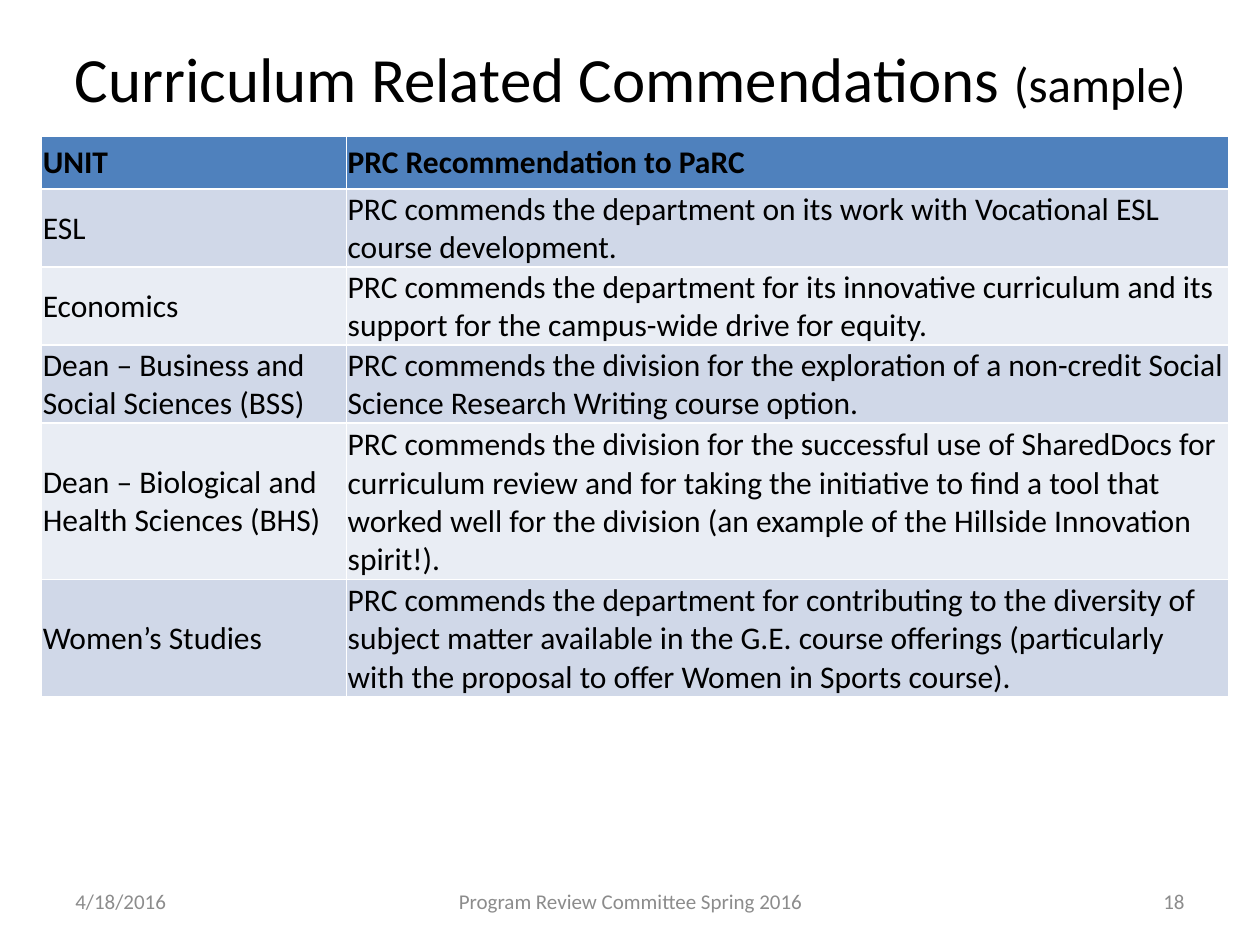
from pptx import Presentation
from pptx.dml.color import RGBColor
from pptx.enum.text import MSO_ANCHOR as ANCHOR, PP_ALIGN as ALIGN
from pptx.util import Inches, Pt

COLORS = {"text": "000000", "footer": "8C8C8C", "header": "4F81BD",
          "odd": "D0D8E8", "even": "E9EDF4"}
LINE_HEIGHT = 0.31

# Unit, recommendation, lines of text in the row
ROWS = [
    ("ESL", "PRC commends the department on its work with Vocational ESL "
     "course development.", 2),
    ("Economics", "PRC commends the department for its innovative curriculum "
     "and its support for the campus-wide drive for equity.", 2),
    ("Dean – Business and Social Sciences (BSS)",
     "PRC commends the division for the exploration of a non-credit Social "
     "Science Research Writing course option.", 2),
    ("Dean – Biological and Health Sciences (BHS)",
     "PRC commends the division for the successful use of SharedDocs for "
     "curriculum review and for taking the initiative to find a tool that "
     "worked well for the division (an example of the Hillside Innovation "
     "spirit!).", 4),
    ("Women’s Studies",
     "PRC commends the department for contributing to the diversity of "
     "subject matter available in the G.E. course offerings (particularly "
     "with the proposal to offer Women in Sports course).", 3),
]


def format_run(r, size, color="text", bold=False):
    r.font.name = "Calibri"
    r.font.size = Pt(size)
    r.font.bold = bold
    r.font.color.rgb = RGBColor.from_string(COLORS[color])


def add_text(left, top, width, height, runs, align, color="text"):
    """Add a text box with one paragraph of (text, size) runs."""
    sp = s.shapes.add_textbox(Inches(left), Inches(top), Inches(width), Inches(height))
    tf = sp.text_frame
    tf.word_wrap = True
    tf.vertical_anchor = ANCHOR.MIDDLE
    p = tf.paragraphs[0]
    p.alignment = align
    for text, size in runs:
        r = p.add_run()
        r.text = text
        format_run(r, size, color)


prs = Presentation()
prs.slide_width, prs.slide_height = Inches(10), Inches(7.5)
s = prs.slides.add_slide(prs.slide_layouts[6])

# Title
add_text(0.42, 0.3, 9.25, 0.62,
         [("Curriculum Related Commendations ", 36), ("(sample) ", 27.9)], ALIGN.CENTER)

# Table; its default style supplies the white borders
table_rows = [("UNIT", "PRC Recommendation to PaRC", 1)] + ROWS
table = s.shapes.add_table(len(table_rows), 2, Inches(0.33), Inches(1.08),
                           Inches(9.42), Inches(4.37)).table
table.columns[0].width = Inches(2.42)
table.columns[1].width = Inches(7)
for i, (unit, recommendation, lines) in enumerate(table_rows):
    is_header = i == 0
    table.rows[i].height = Inches(0.42 if is_header else lines * LINE_HEIGHT)
    fill = "header" if is_header else "odd" if i % 2 else "even"
    for j, text in enumerate((unit, recommendation)):
        cell = table.cell(i, j)
        cell.fill.solid()
        cell.fill.fore_color.rgb = RGBColor.from_string(COLORS[fill])
        cell.margin_left = cell.margin_top = cell.margin_right = Inches(0.01)
        cell.margin_bottom = 0
        cell.vertical_anchor = ANCHOR.MIDDLE if is_header or j == 0 else ANCHOR.BOTTOM
        cell.text_frame.text = text
        format_run(cell.text_frame.paragraphs[0].runs[0], 18, bold=is_header)

# Footer
for left, width, text, align in [
    (0.5, 2.33, "4/18/2016", ALIGN.LEFT),
    (3.42, 3.17, "Program Review Committee Spring 2016", ALIGN.CENTER),
    (7.17, 2.33, "18", ALIGN.RIGHT),
]:
    add_text(left, 6.95, width, 0.4, [(text, 12)], align, "footer")

prs.save("out.pptx")
